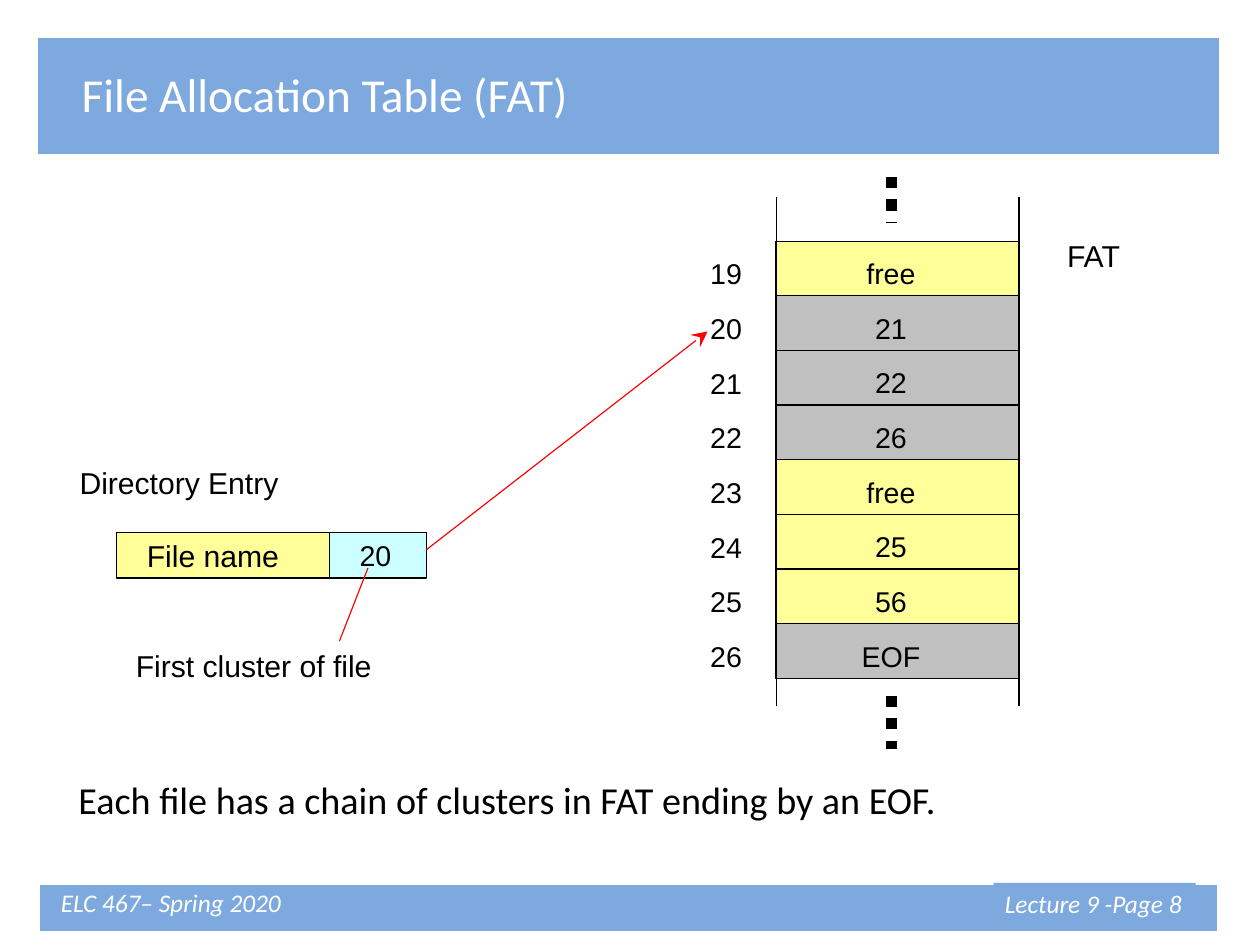
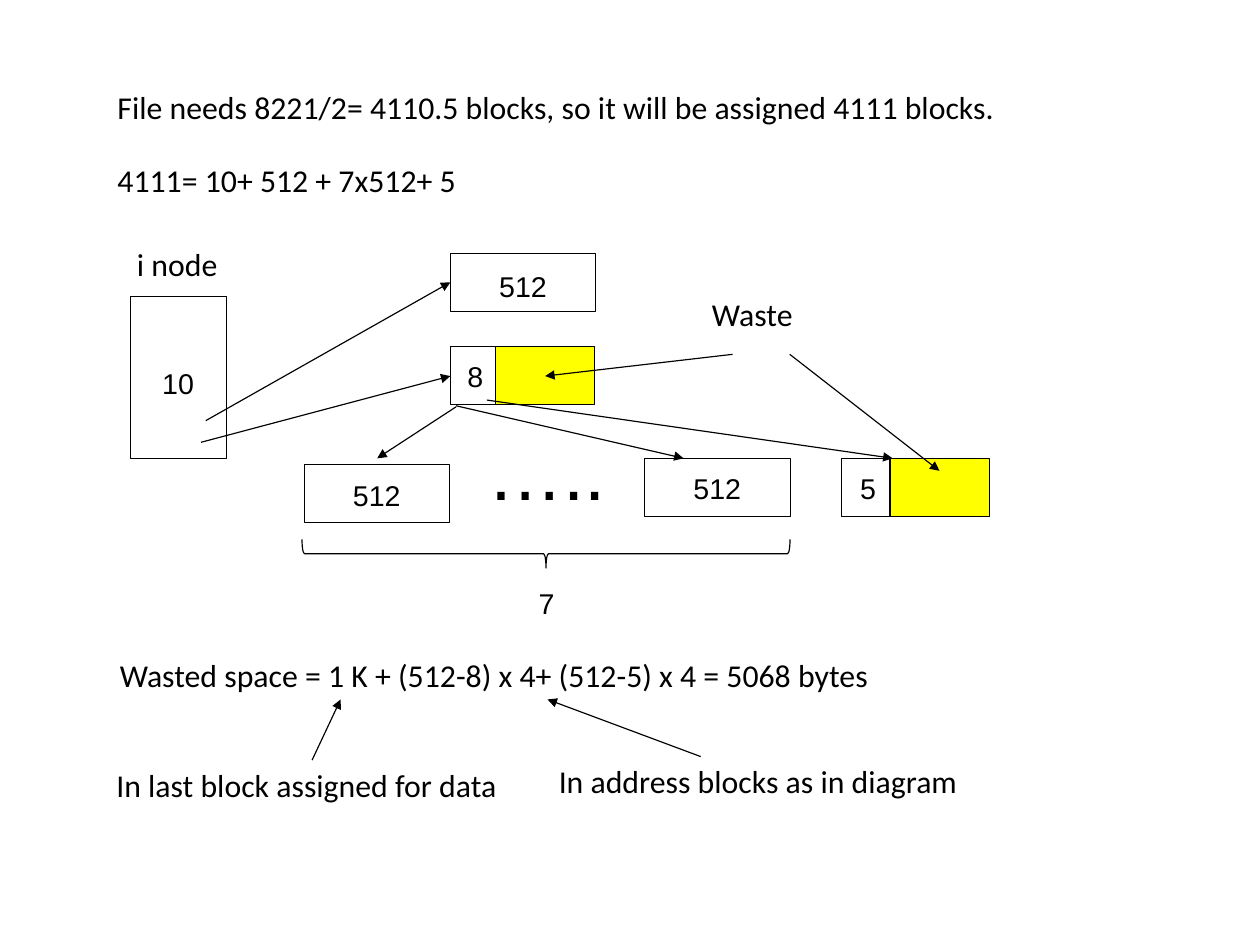
from dataclasses import dataclass

from lxml import etree
from pptx import Presentation
from pptx.dml.color import RGBColor
from pptx.enum.dml import MSO_LINE
from pptx.enum.shapes import MSO_CONNECTOR, MSO_SHAPE
from pptx.enum.text import MSO_ANCHOR, MSO_AUTO_SIZE, PP_ALIGN
from pptx.oxml.ns import qn
from pptx.slide import Slide
from pptx.text.text import TextFrame
from pptx.util import Pt

RECT, BRACE = MSO_SHAPE.RECTANGLE, MSO_SHAPE.LEFT_BRACE
STRAIGHT = MSO_CONNECTOR.STRAIGHT
DOTTED = MSO_LINE.ROUND_DOT
LEFT, CENTER = PP_ALIGN.LEFT, PP_ALIGN.CENTER
TOP, MIDDLE = MSO_ANCHOR.TOP, MSO_ANCHOR.MIDDLE
NO_FIT = MSO_AUTO_SIZE.NONE


@dataclass(frozen=True)
class Theme:
    band: str = "7DA9DF"
    white: str = "FFFFFF"
    black: str = "000000"
    red: str = "FF0000"
    free: str = "FFFF99"
    used: str = "C0C0C0"
    pointer: str = "CCFFFF"
    waste: str = "FFFF00"
    sans: str = "Calibri"
    diagram: str = "Arial"
    title: float = 29.8
    body: float = 24
    note: float = 20
    caption: float = 19
    value: float = 18
    footer: float = 16
    dots: float = 48
    hairline: float = 0.25
    line: float = 0.75
    band_line: float = 2
    dot_line: float = 7


T = Theme()


@dataclass(frozen=True)
class Box:
    x: float
    y: float
    w: float
    h: float
    text: str = ""
    fill: str = T.white
    line: str = T.black
    weight: float = T.line
    size: float = T.value
    pad_right: float = 0
    pad_top: float = 0


@dataclass(frozen=True)
class Label:
    x: float
    y: float
    w: float
    h: float
    text: str
    size: float = T.note
    font: str = T.sans
    color: str = T.black
    italic: bool = False
    fill: str = ""


@dataclass(frozen=True)
class Line:
    x1: float
    y1: float
    x2: float
    y2: float
    color: str = T.black
    weight: float = T.line
    head: str = ""
    head_size: str = "med"
    dotted: bool = False


def rgb(value: str) -> RGBColor:
    return RGBColor.from_string(value)


def write(tf: TextFrame, text: str, *, size: float, font: str = T.sans,
          color: str = T.black, italic: bool = False,
          align: PP_ALIGN = LEFT, anchor: MSO_ANCHOR = TOP,
          wrap: bool = True, gap: float = 0) -> None:
    tf.auto_size = NO_FIT
    tf.word_wrap = wrap
    tf.vertical_anchor = anchor
    for i, line in enumerate(text.split("\n")):
        p = tf.add_paragraph() if i else tf.paragraphs[0]
        p.alignment = align
        p.space_before = Pt(0)
        p.space_after = Pt(gap)
        r = p.add_run()
        r.text = line
        r.font.size = Pt(size)
        r.font.name = font
        r.font.italic = italic
        r.font.color.rgb = rgb(color)


def place(shape, x: float, y: float, w: float, h: float) -> None:
    shape.left, shape.top = Pt(x), Pt(y)
    shape.width, shape.height = Pt(w), Pt(h)


def paint(shape, fill: str, line: str, weight: float) -> None:
    shape.fill.solid()
    shape.fill.fore_color.rgb = rgb(fill)
    shape.line.color.rgb = rgb(line)
    shape.line.width = Pt(weight)


def add_box(s: Slide, b: Box) -> None:
    sp = s.shapes.add_shape(RECT, Pt(b.x), Pt(b.y), Pt(b.w), Pt(b.h))
    sp.shadow.inherit = False
    paint(sp, b.fill, b.line, b.weight)
    if b.text:
        tf = sp.text_frame
        tf.margin_left = tf.margin_bottom = Pt(0)
        tf.margin_right, tf.margin_top = Pt(b.pad_right), Pt(b.pad_top)
        write(tf, b.text, size=b.size, font=T.diagram, align=CENTER,
              anchor=MIDDLE)


def add_label(s: Slide, b: Label) -> None:
    sp = s.shapes.add_textbox(Pt(b.x), Pt(b.y), Pt(b.w), Pt(b.h))
    if b.fill:
        sp.fill.solid()
        sp.fill.fore_color.rgb = rgb(b.fill)
    write(sp.text_frame, b.text, size=b.size, font=b.font, color=b.color,
          italic=b.italic, wrap=False)


def add_line(s: Slide, b: Line) -> None:
    cn = s.shapes.add_connector(STRAIGHT, Pt(b.x1), Pt(b.y1),
                                Pt(b.x2), Pt(b.y2))
    cn.line.color.rgb = rgb(b.color)
    cn.line.width = Pt(b.weight)
    if b.dotted:
        cn.line.dash_style = DOTTED
    sp_pr = cn._element.spPr
    if b.head:
        etree.SubElement(sp_pr.find(qn("a:ln")), qn("a:tailEnd"), type=b.head,
                         w=b.head_size, len=b.head_size)
    etree.SubElement(sp_pr, qn("a:effectLst"))


def draw(s: Slide, *items: Box | Label | Line) -> None:
    adders = {Box: add_box, Label: add_label, Line: add_line}
    for item in items:
        adders[type(item)](s, item)


def set_title(s: Slide, text: str) -> None:
    sp = s.shapes.title
    place(sp, 23, 23, 746, 75)
    paint(sp, T.band, T.white, T.band_line)
    sp.text_frame.margin_left = Pt(28.5)
    sp.text_frame.margin_bottom = Pt(7.2)
    write(sp.text_frame, text, size=T.title, color=T.white, anchor=MIDDLE)


def set_body(s: Slide, text: str, x: float, y: float, w: float, h: float,
             size: float, gap: float = 0) -> None:
    sp = s.placeholders[1]
    place(sp, x, y, w, h)
    write(sp.text_frame, text, size=size, gap=gap)
    for p in sp.text_frame.paragraphs:
        p_pr = p._p.get_or_add_pPr()
        p_pr.set("marL", "0")
        p_pr.set("indent", "0")
        etree.SubElement(p_pr, qn("a:buNone"))


def add_footer(s: Slide, course: str, page: str) -> None:
    style = dict(size=T.footer, color=T.white, italic=True)
    draw(s,
         Box(24.5, 556.3, 743, 31, fill=T.band, line=T.white,
             weight=T.band_line),
         Label(625.9, 556.2, 127.4, 26.6, page, fill=T.band, **style),
         Label(31.3, 555.5, 155, 26.6, course, **style))


def caption(x: float, y: float, w: float, text: str,
            size: float = T.caption) -> Label:
    return Label(x, y, w, 30, text, size, T.diagram)


def build_fat(s: Slide) -> None:
    set_title(s, "File Allocation Table (FAT)")
    set_body(s, "Each file has a chain of clusters in FAT ending by an EOF.",
             42.2, 485.3, 580, 36, T.body)

    left, top, width, pitch = 488.6, 152, 152.8, 34.4
    first, chain = 19, {20, 21, 22, 26}
    values = ["free", "21", "22", "26", "free", "25", "56", "EOF"]
    for i, value in enumerate(values):
        y, cluster = top + i * pitch, first + i
        fill = T.used if cluster in chain else T.free
        draw(s,
             Box(left, y, width, pitch, value, fill, pad_right=7.5,
                 pad_top=6),
             caption(440.3, y + 6, 33.8, str(cluster), T.value))
    for x in (left + 0.8, left + width + 0.5):
        draw(s, Line(x, 124, x, 445))
    for y1, y2 in ((111.6, 140.4), (438.5, 471.6)):
        draw(s, Line(561.6, y1, 561.6, y2, weight=T.dot_line, dotted=True))

    draw(s,
         caption(665.1, 145.8, 47.5, "FAT"),
         caption(43, 288.9, 140.4, "Directory Entry"),
         Box(73.4, 335.3, 134, 28.8, "File name", T.free, size=T.caption,
             pad_right=12.5),
         Box(207.4, 335.3, 61.2, 28.8, "20", T.pointer, pad_right=3),
         caption(78.5, 404.2, 164.2, "First cluster of file"),
         Line(213.8, 403.9, 231.8, 357.8, T.red),
         Line(268.6, 346.3, 445.7, 208.8, T.red, head="stealth",
              head_size="lg"))
    add_footer(s, "ELC 467– Spring 2020", "Lecture 9 -Page 8")


def build_inode(s: Slide) -> None:
    title = s.shapes.title._element
    title.getparent().remove(title)
    set_body(s, "File needs 8221/2= 4110.5 blocks, so it will be assigned "
             "4111 blocks.\n4111= 10+ 512 + 7x512+ 5",
             66.8, 51.8, 600, 80, T.note, gap=21.7)

    w, h, waste_w = 91.5, 36.7, 62.6
    draw(s, Box(82, 186.5, 60.3, 102.2, "10", weight=T.hairline, pad_top=7))
    for x, y, pad in ((283.7, 159.6, 5), (191.6, 292.3, 2),
                      (406.1, 288.7, 1)):
        draw(s, Box(x, y, w, h, "512", weight=T.hairline, pad_top=pad))
    for x, y, used, count in ((283.7, 218.2, 28.5, "8"),
                              (529.9, 288.7, 30.8, "5")):
        draw(s,
             Box(x, y, used, h, count, weight=T.hairline, pad_right=-3,
                 pad_top=1),
             Box(x + used, y, waste_w, h, fill=T.waste))

    brace = s.shapes.add_shape(BRACE, Pt(335), Pt(195.1), Pt(18), Pt(307.4))
    brace.rotation = 270
    brace.shadow.inherit = False
    paint(brace, T.white, T.black, T.line)

    draw(s,
         Label(79.2, 150.9, 65.5, 31.7, "i node"),
         Label(441.4, 182.2, 66.2, 31.7, "Waste"),
         caption(299.7, 263.5, 90, "…..", T.dots),
         caption(332.2, 365.5, 24.5, "7", T.value),
         Label(68.4, 409.4, 490.3, 31.7,
               "Wasted space = 1 K + (512-8) x 4+ (512-5) x 4 = 5068 bytes"),
         Label(66.2, 478.8, 260.6, 31.7, "In last block assigned for data"),
         Label(344.9, 476.6, 267.8, 31.7, "In address blocks as in diagram"))

    arrows = [
        (129.6, 265, 283.7, 177.8), (126.7, 278.6, 283.7, 236.9),
        (287.3, 256.3, 237.6, 288.7), (287.3, 255.6, 430.6, 288.7),
        (306.7, 252, 562.3, 288.7),
        (461.5, 223.2, 343.4, 236.9), (497.5, 223.2, 591.8, 296.6),
        (196.6, 478.8, 214.6, 440.6), (441.4, 476.6, 344.9, 440.6),
    ]
    draw(s, *(Line(*ends, head="triangle") for ends in arrows))


def main() -> None:
    prs = Presentation()
    prs.slide_width, prs.slide_height = Pt(793.7), Pt(595.28)
    for build in (build_fat, build_inode):
        build(prs.slides.add_slide(prs.slide_layouts[1]))
    prs.save("out.pptx")


if __name__ == "__main__":
    main()
